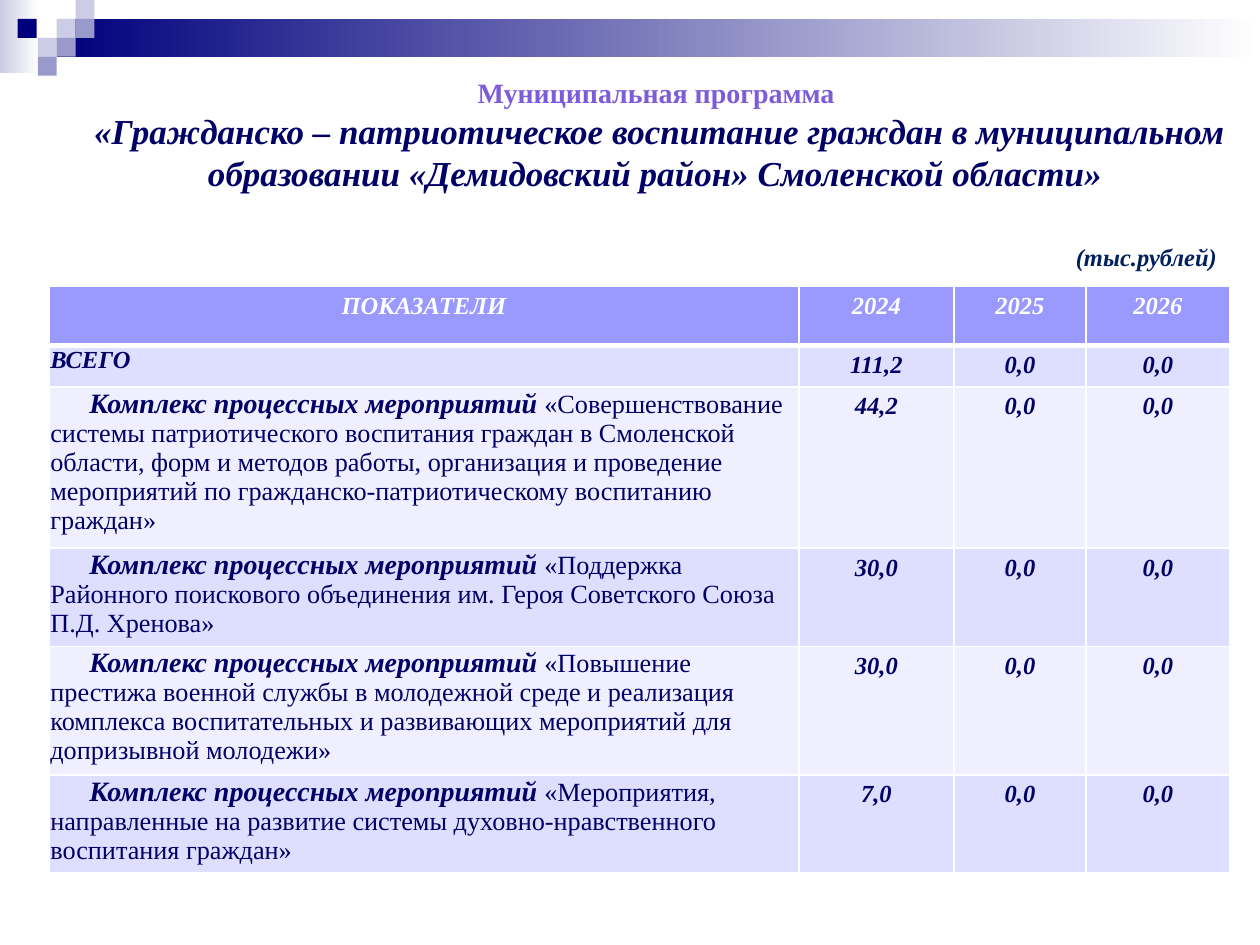
from dataclasses import dataclass

from lxml import etree
from pptx import Presentation
from pptx.dml.color import RGBColor
from pptx.enum.dml import MSO_FILL
from pptx.enum.shapes import MSO_SHAPE
from pptx.enum.text import MSO_ANCHOR, MSO_AUTO_SIZE, PP_ALIGN
from pptx.oxml.ns import qn
from pptx.util import Inches, Pt

RECTANGLE = MSO_SHAPE.RECTANGLE
CENTER, LEFT = PP_ALIGN.CENTER, PP_ALIGN.LEFT
TOP = MSO_ANCHOR.TOP
NO_AUTOFIT = MSO_AUTO_SIZE.NONE
SOLID = MSO_FILL.SOLID

FONT = "Times New Roman"
WHITE = RGBColor(0xFF, 0xFF, 0xFF)
NAVY = RGBColor(0x00, 0x00, 0x7D)
PALE = RGBColor(0xCC, 0xCC, 0xE6)
LILAC = RGBColor(0x99, 0x99, 0xCC)
VIOLET = RGBColor(0x7D, 0x5C, 0xDA)
INK = RGBColor(0x00, 0x00, 0x66)
UNIT_BLUE = RGBColor(0x00, 0x20, 0x60)
HEADER_FILL = RGBColor(0x99, 0x99, 0xFF)
BAND_FILLS = (RGBColor(0xDE, 0xDE, 0xFF), RGBColor(0xEF, 0xEF, 0xFF))

SQUARE = 0.15
COLUMN_WIDTHS = (5.95, 1.23, 1.05, 1.14)
ROW_HEIGHTS = (0.47, 0.33, 1.28, 0.78, 1.02, 0.78)
YEARS = ("2024", "2025", "2026")
MEASURE_LABEL = "Комплекс процессных мероприятий "


@dataclass
class Square:
    left: float
    top: float
    color: RGBColor


@dataclass
class Measure:
    name: str
    amount: str


SQUARES = (
    Square(0.45, 0.15, PALE),
    Square(0.6, 0, PALE),
    Square(0.6, 0.15, LILAC),
    Square(0.3, 0.3, PALE),
    Square(0.14, 0.15, NAVY),
    Square(0.45, 0.3, LILAC),
    Square(0.3, 0.45, LILAC),
)

MEASURES = (
    Measure("«Совершенствование системы патриотического воспитания граждан в "
            "Смоленской области, форм и методов работы, организация и проведение "
            "мероприятий по гражданско-патриотическому воспитанию граждан»", "44,2"),
    Measure("«Поддержка Районного поискового объединения им. Героя Советского "
            "Союза П.Д. Хренова»", "30,0"),
    Measure("«Повышение престижа военной службы в молодежной среде и реализация "
            "комплекса воспитательных и развивающих мероприятий для допризывной "
            "молодежи»", "30,0"),
    Measure("«Мероприятия, направленные на развитие системы "
            "духовно-нравственного воспитания граждан»", "7,0"),
)


def set_font(font, size: float, color: RGBColor, bold: bool = True,
             italic: bool = True) -> None:
    font.name = FONT
    font.size = Pt(size)
    font.color.rgb = color
    font.bold = bold
    font.italic = italic


def add_rectangle(slide, left: float, top: float, width: float, height: float,
                  color: RGBColor, fade: bool = False) -> None:
    shape = slide.shapes.add_shape(RECTANGLE, Inches(left), Inches(top),
                                   Inches(width), Inches(height))
    shape.shadow.inherit = False
    shape.line.fill.background()
    if fade:
        shape.fill.gradient()
        shape.fill.gradient_angle = 0
        for stop, stop_color, position in zip(
                shape.fill.gradient_stops, (color, WHITE), (0, 1)):
            stop.color.rgb = stop_color
            stop.position = position
    else:
        shape.fill.solid()
        shape.fill.fore_color.rgb = color


def set_cell(cell, fill: RGBColor, bottom_width: float = 1) -> None:
    """Give a cell white borders and a plain fill."""
    properties = cell._tc.get_or_add_tcPr()
    for side in ("lnL", "lnR", "lnT", "lnB"):
        width = bottom_width if side == "lnB" else 1
        line = etree.SubElement(properties, qn(f"a:{side}"), w=str(Pt(width)))
        line_fill = etree.SubElement(line, qn("a:solidFill"))
        etree.SubElement(line_fill, qn("a:srgbClr"), val=str(WHITE))
    cell.fill.solid()
    cell.fill.fore_color.rgb = fill


def write_cell(cell, text: str, color: RGBColor, alignment=CENTER) -> None:
    paragraph = cell.text_frame.paragraphs[0]
    paragraph.text = text
    paragraph.alignment = alignment
    set_font(paragraph.font, 14, color)


def tighten(cell) -> None:
    cell.margin_left = cell.margin_top = cell.margin_right = Inches(0.01)
    cell.margin_bottom = 0


def write_measure(cell, name: str) -> None:
    paragraph = cell.text_frame.paragraphs[0]
    properties = paragraph._p.get_or_add_pPr()
    properties.set("marL", "0")
    properties.set("indent", str(Inches(0.31)))
    for text, size, strong in ((MEASURE_LABEL, 16, True), (name, 15, False)):
        run = paragraph.add_run()
        run.text = text
        set_font(run.font, size, INK, strong, strong)


def add_title(slide) -> None:
    title = slide.shapes.title
    title.left, title.top = Inches(0.47), Inches(0.55)
    title.width, title.height = Inches(9.53), Inches(1.04)
    frame = title.text_frame
    frame.word_wrap = True
    frame.auto_size = NO_AUTOFIT
    frame.vertical_anchor = TOP
    heading, program = frame.paragraphs[0], frame.add_paragraph()
    heading.text = "Муниципальная программа "
    program.text = ("«Гражданско – патриотическое воспитание граждан в муниципальном "
                    "образовании «Демидовский район» Смоленской области» ")
    set_font(heading.font, 16, VIOLET, italic=False)
    set_font(program.font, 20, INK)
    heading.alignment = program.alignment = CENTER


def add_budget_table(slide) -> None:
    table = slide.shapes.add_table(
        len(ROW_HEIGHTS), len(COLUMN_WIDTHS), Inches(0.39), Inches(2.27),
        Inches(sum(COLUMN_WIDTHS)), Inches(sum(ROW_HEIGHTS))).table
    for column, width in zip(table.columns, COLUMN_WIDTHS):
        column.width = Inches(width)
    for row, height in zip(table.rows, ROW_HEIGHTS):
        row.height = Inches(height)

    # Header
    for index, text in enumerate(("ПОКАЗАТЕЛИ", *YEARS)):
        cell = table.cell(0, index)
        set_cell(cell, HEADER_FILL, bottom_width=3)
        write_cell(cell, text, WHITE)

    # Total and measures
    amounts = ("111,2", *(measure.amount for measure in MEASURES))
    for row_index, amount in enumerate(amounts, start=1):
        for column_index in range(len(COLUMN_WIDTHS)):
            set_cell(table.cell(row_index, column_index),
                     BAND_FILLS[(row_index - 1) % 2])
        for column_index, value in enumerate((amount, "0,0", "0,0"), start=1):
            write_cell(table.cell(row_index, column_index), value, INK)
        tighten(table.cell(row_index, 0))
    write_cell(table.cell(1, 0), "ВСЕГО", INK, LEFT)
    for row_index, measure in enumerate(MEASURES, start=2):
        write_measure(table.cell(row_index, 0), measure.name)


def add_unit_note(slide) -> None:
    box = slide.shapes.add_textbox(Inches(8.44), Inches(1.87),
                                   Inches(1.33), Inches(0.34))
    box.text_frame.word_wrap = False
    paragraph = box.text_frame.paragraphs[0]
    paragraph.text = "(тыс.рублей)"
    set_font(paragraph.font, 14, UNIT_BLUE)


def main() -> None:
    presentation = Presentation()
    presentation.slide_width, presentation.slide_height = Inches(10), Inches(7.5)
    slide = presentation.slides.add_slide(presentation.slide_layouts[5])

    # Top ornament
    add_rectangle(slide, 0, 0, 0.31, 0.58, PALE, fade=True)
    add_rectangle(slide, 0.45, 0.15, 9.55, 0.3, NAVY, fade=True)
    for square in SQUARES:
        add_rectangle(slide, square.left, square.top, SQUARE, SQUARE, square.color)

    add_title(slide)
    add_budget_table(slide)
    add_unit_note(slide)
    presentation.save("out.pptx")


if __name__ == "__main__":
    main()
